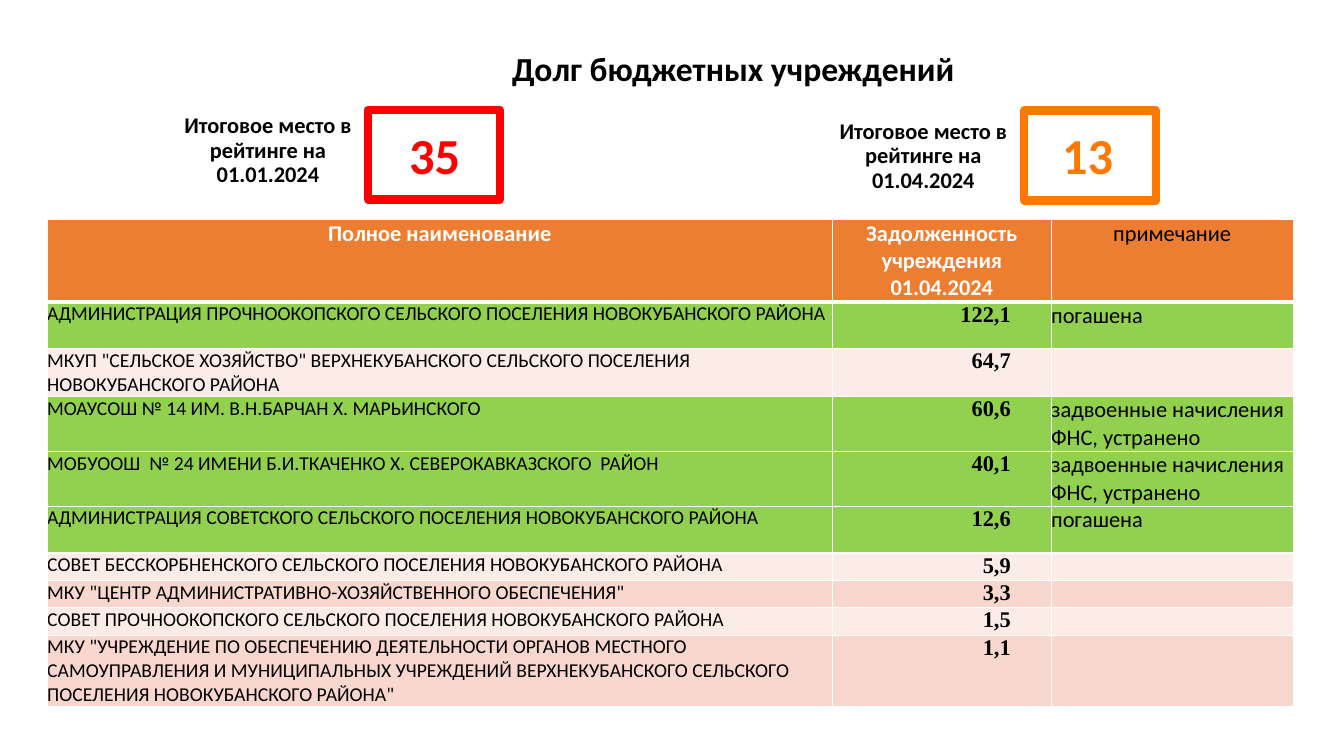
from lxml.etree import SubElement
from pptx import Presentation
from pptx.dml.color import RGBColor
from pptx.enum.shapes import MSO_SHAPE
from pptx.enum.text import MSO_ANCHOR, MSO_AUTO_SIZE, PP_ALIGN
from pptx.oxml.ns import qn
from pptx.util import Cm, Pt

HUES = {
    "black": "000000", "white": "FFFFFF", "head": "ED7D31", "green": "92D050",
    "light": "FCECE8", "rose": "F8D7CE", "red": "FF0000", "orange": "FF7900",
}
LEFT, MID, RIGHT = PP_ALIGN.LEFT, PP_ALIGN.CENTER, PP_ALIGN.RIGHT
WIDTHS = [19.79, 5.51, 6.1]
HEIGHTS = [2.04, 1.18, 1.18, 1.35, 1.35, 1.18, 0.68, 0.68, 0.68, 1.78]
HEADS = ["Полное наименование", "Задолженность учреждения 01.04.2024", "примечание"]
PAID, DOUBLE = "погашена", "задвоенные начисления ФНС, устранено"
DEBTS = [
    ("АДМИНИСТРАЦИЯ ПРОЧНООКОПСКОГО СЕЛЬСКОГО ПОСЕЛЕНИЯ НОВОКУБАНСКОГО РАЙОНА",
     "122,1", PAID),
    ('МКУП "СЕЛЬСКОЕ ХОЗЯЙСТВО" ВЕРХНЕКУБАНСКОГО СЕЛЬСКОГО ПОСЕЛЕНИЯ '
     "НОВОКУБАНСКОГО РАЙОНА", "64,7", ""),
    ("МОАУСОШ № 14 ИМ. В.Н.БАРЧАН Х. МАРЬИНСКОГО", "60,6", DOUBLE),
    ("МОБУООШ  № 24 ИМЕНИ Б.И.ТКАЧЕНКО Х. СЕВЕРОКАВКАЗСКОГО  РАЙОН", "40,1", DOUBLE),
    ("АДМИНИСТРАЦИЯ СОВЕТСКОГО СЕЛЬСКОГО ПОСЕЛЕНИЯ НОВОКУБАНСКОГО РАЙОНА",
     "12,6", PAID),
    ("СОВЕТ БЕССКОРБНЕНСКОГО СЕЛЬСКОГО ПОСЕЛЕНИЯ НОВОКУБАНСКОГО РАЙОНА", "5,9", ""),
    ('МКУ "ЦЕНТР АДМИНИСТРАТИВНО-ХОЗЯЙСТВЕННОГО ОБЕСПЕЧЕНИЯ"', "3,3", ""),
    ("СОВЕТ ПРОЧНООКОПСКОГО СЕЛЬСКОГО ПОСЕЛЕНИЯ НОВОКУБАНСКОГО РАЙОНА", "1,5", ""),
    ('МКУ "УЧРЕЖДЕНИЕ ПО ОБЕСПЕЧЕНИЮ ДЕЯТЕЛЬНОСТИ ОРГАНОВ МЕСТНОГО '
     "САМОУПРАВЛЕНИЯ И МУНИЦИПАЛЬНЫХ УЧРЕЖДЕНИЙ ВЕРХНЕКУБАНСКОГО СЕЛЬСКОГО "
     'ПОСЕЛЕНИЯ НОВОКУБАНСКОГО РАЙОНА"', "1,1", ""),
]


def color(name):
    return RGBColor.from_string(HUES[name])


def write(frame, text, size=16, hue="black", bold=False, align=LEFT,
          font="Calibri", space=None):
    frame.word_wrap = True
    par = frame.paragraphs[0]
    par.alignment = align
    par.line_spacing = space
    if not text:
        SubElement(par._p, qn("a:endParaRPr"), sz=str(size * 100))
        return
    run = par.add_run()
    run.text = text
    run.font.size = Pt(size)
    run.font.name = font
    run.font.bold = bold
    run.font.color.rgb = color(hue)


def edge(cell, top, base):
    """Give the cell white borders; top and base are widths in points."""
    props = cell._tc.get_or_add_tcPr()
    for side, width in (("L", 1), ("R", 1), ("T", top), ("B", base)):
        line = SubElement(props, qn(f"a:ln{side}"), w=str(Pt(width)))
        fill = SubElement(line, qn("a:solidFill"))
        SubElement(fill, qn("a:srgbClr"), val=HUES["white"])


class Page:
    def __init__(self, deck):
        self.slide = deck.slides.add_slide(deck.slide_layouts[5])
        self.shapes = self.slide.shapes

    def title(self, text, left, top, width, height):
        shape = self.shapes.title
        shape.left, shape.top = Cm(left), Cm(top)
        shape.width, shape.height = Cm(width), Cm(height)
        shape.text_frame.auto_size = MSO_AUTO_SIZE.NONE
        shape.text_frame.vertical_anchor = MSO_ANCHOR.MIDDLE
        write(shape.text_frame, text, size=24, bold=True, align=MID, space=0.9)

    def label(self, text, left, top, width, height, anchor=MSO_ANCHOR.TOP, **style):
        box = self.shapes.add_textbox(Cm(left), Cm(top), Cm(width), Cm(height))
        box.text_frame.vertical_anchor = anchor
        write(box.text_frame, text, bold=True, **style)

    def frame(self, left, top, width, height, hue):
        box = self.shapes.add_shape(
            MSO_SHAPE.RECTANGLE, Cm(left), Cm(top), Cm(width), Cm(height))
        box.shadow.inherit = False
        box.fill.background()
        box.line.color.rgb = color(hue)
        box.line.width = Pt(6)

    def cell(self, cell, text, fill, top=1, base=1, pad=0, **style):
        cell.margin_left = cell.margin_top = cell.margin_bottom = 0
        cell.margin_right = Cm(pad)
        edge(cell, top, base)
        cell.fill.solid()
        cell.fill.fore_color.rgb = color(fill)
        write(cell.text_frame, text, **style)

    def table(self, left, top):
        table = self.shapes.add_table(
            len(HEIGHTS), len(WIDTHS), Cm(left), Cm(top),
            Cm(sum(WIDTHS)), Cm(sum(HEIGHTS))).table
        table.first_row = table.horz_banding = False
        for col, width in zip(table.columns, WIDTHS):
            col.width = Cm(width)
        for row, height in zip(table.rows, HEIGHTS):
            row.height = Cm(height)
        for col, text in enumerate(HEADS):
            main = col < 2
            self.cell(table.cell(0, col), text, "head", base=3, align=MID,
                      bold=main, hue="white" if main else "black")
        for row, (name, debt, note) in enumerate(DEBTS, 1):
            fill = "green" if note else "rose" if row % 2 else "light"
            top = 3 if row == 1 else 1
            self.cell(table.cell(row, 0), name, fill, top, size=14)
            self.cell(table.cell(row, 1), debt, fill, top, pad=1.02, bold=True,
                      align=RIGHT, font="Times New Roman")
            self.cell(table.cell(row, 2), note, fill, top)


def main():
    deck = Presentation()
    deck.slide_width, deck.slide_height = Cm(33.87), Cm(19.05)
    page = Page(deck)
    page.title("Долг бюджетных учреждений", 3.66, 0.71, 29.64, 2.16)
    page.table(1.19, 5.54)
    ranks = [
        ("01.01.2024", "35", "red", 3.73, 2.72, 6.05, 10.06, 9.27, 2.77),
        ("01.04.2024", "13", "orange", 20.45, 2.87, 5.64, 26.52, 25.81, 2.79),
    ]
    for date, place, hue, left, top, width, spot, side, high in ranks:
        page.label(f"Итоговое место в рейтинге на {date}", left, top, width, 2.16,
                   MSO_ANCHOR.MIDDLE, align=MID, space=0.9)
        page.label(place, spot, 3, 2.24, 1.8, size=36, hue=hue)
        page.frame(side, high, 3.33, 2.26, hue)
    deck.save("out.pptx")


if __name__ == "__main__":
    main()
